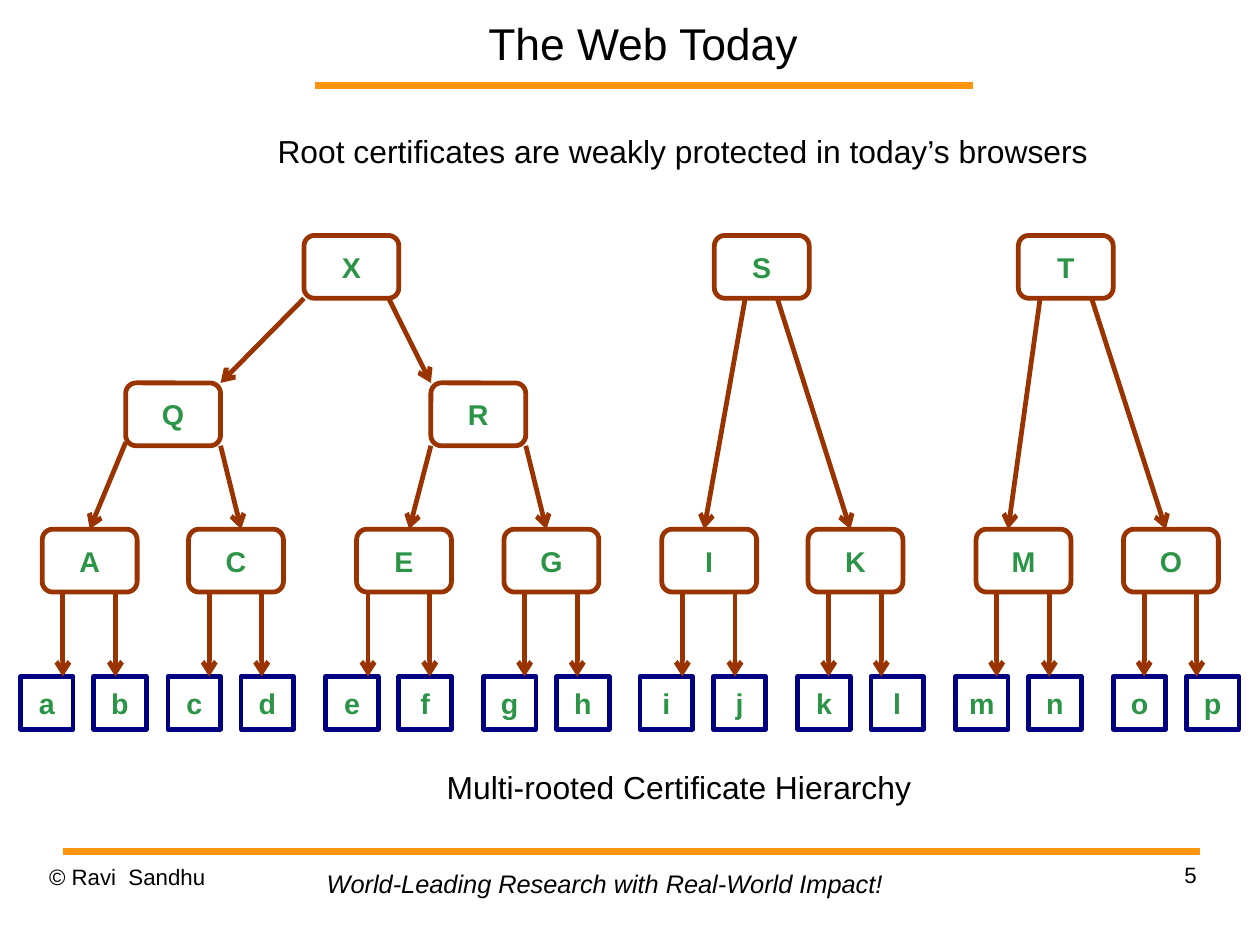
from lxml import etree
from pptx import Presentation
from pptx.dml.color import RGBColor
from pptx.enum import shapes, text
from pptx.oxml import ns
from pptx.util import Inches, Pt

BLACK = RGBColor(0x00, 0x00, 0x00)
ORANGE = RGBColor(0xFF, 0x95, 0x0E)
BROWN = RGBColor(0x99, 0x33, 0x00)
NAVY = RGBColor(0x00, 0x00, 0x80)
GREEN = RGBColor(0x2C, 0x94, 0x47)

CM_PER_INCH = 2.54
PAGE_W, PAGE_H = 28 / CM_PER_INCH, 21 / CM_PER_INCH
NODE_W, NODE_H, LEAF_SIZE = 0.83, 0.55, 0.46
LEAF_GAP = 0.64
ROOT_Y, MIDDLE_Y, ISSUER_Y, LEAF_Y = 0, 1.29, 2.57, 3.86

ROOTS = {"X": 2.66, "S": 6.25, "T": 8.91}
MIDDLES = {"Q": 1.1, "R": 3.77}
# Issuer: its left edge, left edge of its first leaf, names of its leaves
ISSUERS = {
    "A": (0.37, 0.18, "ab"), "C": (1.65, 1.47, "cd"),
    "E": (3.12, 2.85, "ef"), "G": (4.41, 4.23, "gh"),
    "I": (5.79, 5.6, "ij"), "K": (7.07, 6.98, "kl"),
    "M": (8.54, 8.36, "mn"), "O": (9.83, 9.74, "op"),
}
# Parent, child, start (x, y) within the parent, end x within the child
BRANCHES = [
    ("X", "Q", 0, NODE_H, NODE_W), ("X", "R", 0.74, NODE_H, 0),
    ("Q", "A", 0, 0.52, NODE_W / 2), ("Q", "C", NODE_W, NODE_H, 0.46),
    ("R", "E", 0, NODE_H, 0.46), ("R", "G", NODE_W, NODE_H, 0.37),
    ("S", "I", 0.27, NODE_H, 0.37), ("S", "K", 0.55, NODE_H, 0.37),
    ("T", "M", 0.19, NODE_H, 0.28), ("T", "O", 0.64, NODE_H, 0.37),
]


def write(shape, words, size, color=BLACK, bold=False, italic=False,
          align=text.PP_ALIGN.LEFT, anchor=text.MSO_ANCHOR.TOP,
          margins=(0.1, 0.05), wrap=True, grow=False, spacing=None):
    frame = shape.text_frame
    frame.word_wrap = wrap
    frame.auto_size = (text.MSO_AUTO_SIZE.SHAPE_TO_FIT_TEXT if grow
                       else text.MSO_AUTO_SIZE.NONE)
    frame.vertical_anchor = anchor
    frame.margin_left = frame.margin_right = Inches(margins[0])
    frame.margin_top = frame.margin_bottom = Inches(margins[1])
    para = frame.paragraphs[0]
    para.alignment = align
    if spacing:
        para.line_spacing = spacing
    span = para.add_run()
    span.text = words
    font = span.font
    font.name, font.size, font.color.rgb = "Arial", Pt(size), color
    font.bold, font.italic = bold, italic


def add_text(page, box, words, size, **style):
    write(page.shapes.add_textbox(*map(Inches, box)), words, size, **style)


def add_line(page, start, end, color, width, arrow=False):
    line = page.shapes.add_connector(
        shapes.MSO_CONNECTOR.STRAIGHT, *map(Inches, (*start, *end)))
    line.line.color.rgb = color
    line.line.width = Pt(width)
    if arrow:
        outline = line._element.spPr.find(ns.qn("a:ln"))
        etree.SubElement(outline, ns.qn("a:tailEnd"), type="arrow")
    etree.SubElement(line._element.spPr, ns.qn("a:effectLst"))
    return line


def add_node(page, kind, box, name, color):
    node = page.shapes.add_shape(kind, *map(Inches, box))
    node.shadow.inherit = False
    node.fill.background()
    node.line.color.rgb = color
    node.line.width = Pt(3)
    write(node, name, 18, color=GREEN, bold=True, align=text.PP_ALIGN.CENTER,
          anchor=text.MSO_ANCHOR.MIDDLE, margins=(0.11, 0.06), wrap=False)
    return node


def add_heading(page, left, top, width, height):
    title = page.shapes.title
    title.left, title.top = Inches(left), Inches(top)
    title.width, title.height = Inches(width), Inches(height)
    write(title, "The Web Today", 28, align=text.PP_ALIGN.CENTER,
          anchor=text.MSO_ANCHOR.MIDDLE, margins=(0, 0))
    rule_y = top + height
    add_line(page, (left + 0.35, rule_y), (left + 6.1, rule_y), ORANGE, 4.31)


def add_hierarchy(page, left, top):
    # Certificate authorities, level by level
    spots = {name: (left + x, top + ROOT_Y) for name, x in ROOTS.items()}
    spots |= {name: (left + x, top + MIDDLE_Y) for name, x in MIDDLES.items()}
    spots |= {name: (left + issuer[0], top + ISSUER_Y)
              for name, issuer in ISSUERS.items()}
    nodes = {name: add_node(page, shapes.MSO_SHAPE.ROUNDED_RECTANGLE,
                            (*spot, NODE_W, NODE_H), name, BROWN)
             for name, spot in spots.items()}

    # Arrows between authorities
    for parent, child, start_x, start_y, end_x in BRANCHES:
        x, y = spots[parent]
        child_x, child_y = spots[child]
        arrow = add_line(page, (x + start_x, y + start_y),
                         (child_x + end_x, child_y), BROWN, 3, arrow=True)
        if end_x == NODE_W / 2:
            arrow.end_connect(nodes[child], 0)

    # Leaf certificates, each under its issuer
    leaf_y = top + LEAF_Y
    for issuer, (issuer_x, first_x, names) in ISSUERS.items():
        drops = (0.1 if issuer == "E" else 0.18, 0.64)
        for i, (name, drop) in enumerate(zip(names, drops)):
            add_node(page, shapes.MSO_SHAPE.RECTANGLE,
                     (left + first_x + i * LEAF_GAP, leaf_y, LEAF_SIZE, LEAF_SIZE),
                     name, NAVY)
            x = left + issuer_x + drop
            add_line(page, (x, top + ISSUER_Y + NODE_H), (x, leaf_y),
                     BROWN, 3, arrow=True)


def add_footer(page, left, top, width):
    add_line(page, (left + 0.12, top), (left + width + 0.03, top), ORANGE, 4.31)
    add_text(page, (left, top + 0.1, 2.57, 0.57), "© Ravi  Sandhu", 14,
             margins=(0, 0), spacing=1.01)
    add_text(page, (left + width - 2.57, top + 0.08, 2.57, 0.57), "5", 14,
             align=text.PP_ALIGN.RIGHT, margins=(0, 0), spacing=1.01)
    add_text(page, (left + 2.33, top + 0.1, 5.08, 0.37),
             "World-Leading Research with Real-World Impact!", 16,
             italic=True, wrap=False, grow=True)


def main():
    deck = Presentation()
    deck.slide_width, deck.slide_height = Inches(PAGE_W), Inches(PAGE_H)
    page = deck.slides.add_slide(deck.slide_layouts[5])
    add_heading(page, 2.41, 0, 6.43, 0.75)
    add_text(page, (2.33, 1.1, 7.35, 0.44),
             "Root certificates are weakly protected in today’s browsers", 20,
             wrap=False, grow=True)
    add_hierarchy(page, 0, 2.06)
    add_text(page, (3.81, 6.67, 4.3, 0.44), "Multi-rooted Certificate Hierarchy",
             20, wrap=False, grow=True)
    add_footer(page, 0.43, 7.45, 10.04)
    deck.save("out.pptx")


if __name__ == "__main__":
    main()
